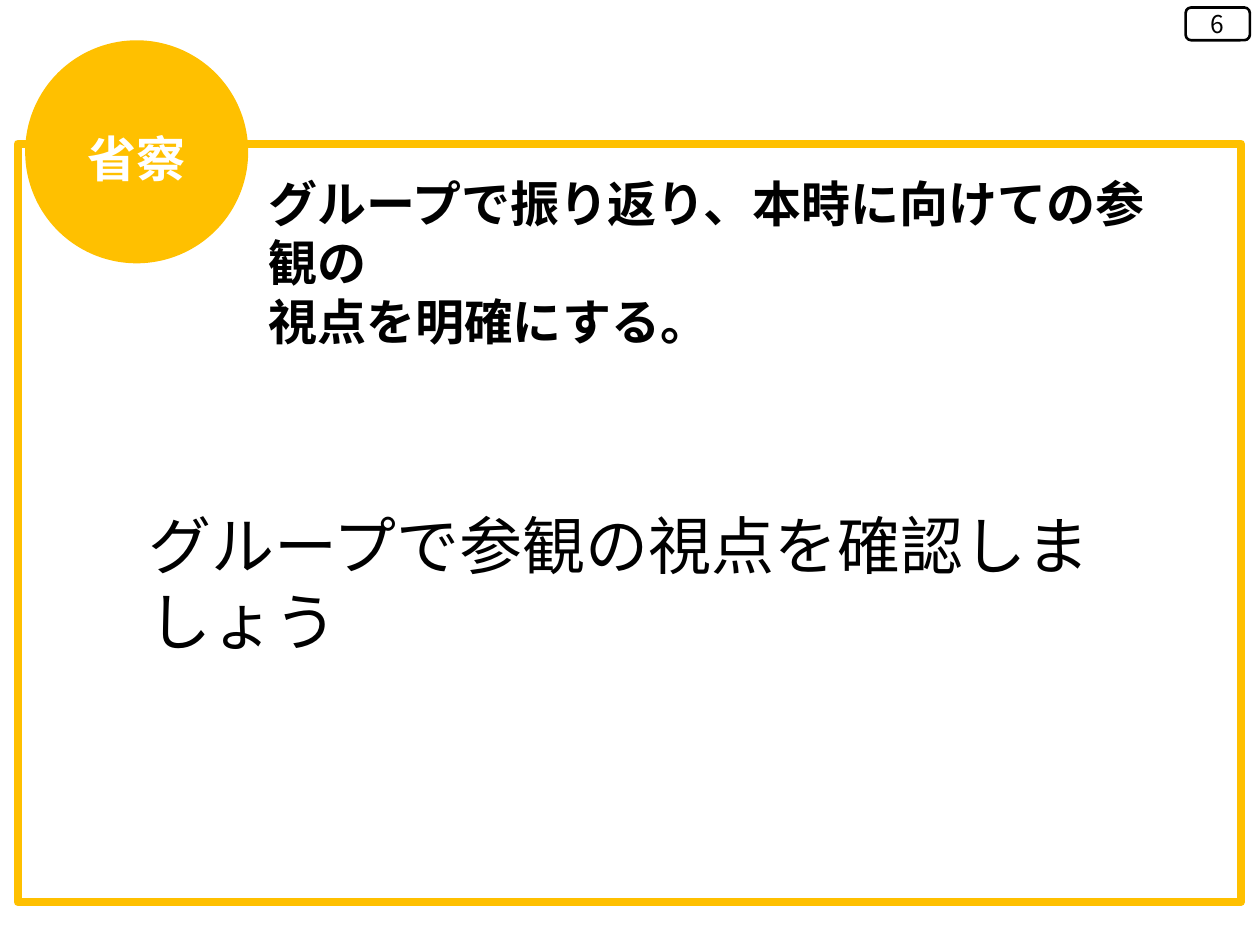
from dataclasses import dataclass

from lxml.etree import SubElement
from pptx import Presentation
from pptx.dml.color import RGBColor
from pptx.enum.shapes import MSO_SHAPE as Preset
from pptx.enum.text import MSO_ANCHOR as Anchor, MSO_AUTO_SIZE as Fit, PP_ALIGN as Align
from pptx.oxml.ns import qn
from pptx.util import Inches, Pt

FONT = "Noto Sans CJK JP"
GOLD, WHITE, BLACK = "FFC000", "FFFFFF", "000000"


@dataclass
class Box:
    left: float
    top: float
    width: float
    height: float

    def lengths(self):
        return [Inches(v) for v in (self.left, self.top, self.width, self.height)]


@dataclass
class Style:
    size: int
    color: str = BLACK
    bold: bool = False
    align: Align = Align.LEFT
    anchor: Anchor = Anchor.TOP


def rgb(color: str) -> RGBColor:
    return RGBColor.from_string(color)


def write(shape, text: str, style: Style) -> None:
    frame = shape.text_frame
    frame.text = text
    frame.word_wrap = True
    frame.auto_size = Fit.NONE
    frame.vertical_anchor = style.anchor
    for para in frame.paragraphs:
        para.alignment = style.align
        para.line_spacing = Pt(round(style.size * 1.2, 1))
        for run in para.runs:
            font = run.font
            font.name, font.size, font.bold = FONT, Pt(style.size), style.bold
            font.color.rgb = rgb(style.color)
            # Japanese glyphs take the East Asian typeface
            SubElement(run._r.get_or_add_rPr(), qn("a:ea"), typeface=FONT)


def draw(shapes, kind: Preset, box: Box, fill: str = "", line: str = "", width: float = 0):
    shape = shapes.add_shape(kind, *box.lengths())
    shape.shadow.inherit = False
    if fill:
        shape.fill.solid()
        shape.fill.fore_color.rgb = rgb(fill)
    else:
        shape.fill.background()
    if line:
        shape.line.color.rgb = rgb(line)
        shape.line.width = Pt(width)
    else:
        shape.line.fill.background()
    return shape


def label(shapes, box: Box, text: str, style: Style) -> None:
    write(shapes.add_textbox(*box.lengths()), text, style)


def main() -> None:
    deck = Presentation()
    deck.slide_width, deck.slide_height = Inches(10), Inches(7.5)
    slide = deck.slides.add_slide(deck.slide_layouts[5])
    shapes = slide.shapes

    # Heading
    title = shapes.title
    title.left, title.top, title.width, title.height = Box(2.03, 1.33, 7.38, 1.04).lengths()
    write(title, "グループで振り返り、本時に向けての参観の\n視点を明確にする。", Style(28, bold=True))

    # Frame
    draw(shapes, Preset.RECTANGLE, Box(0.14, 1.14, 9.71, 6.02), line=GOLD, width=4.5)

    # Phase badge
    badge = shapes.add_group_shape().shapes
    draw(badge, Preset.OVAL, Box(0.2, 0.32, 1.77, 1.77), fill=GOLD)
    label(badge, Box(0.11, 0.97, 1.95, 0.57), "省察",
          Style(28, WHITE, True, Align.CENTER))

    # Page number
    page = draw(shapes, Preset.ROUNDED_RECTANGLE, Box(9.41, 0.06, 0.51, 0.26),
                WHITE, BLACK, 1.5)
    write(page, "6", Style(14, align=Align.CENTER, anchor=Anchor.MIDDLE))

    # Task
    label(shapes, Box(1.08, 3.97, 7.83, 0.71), "グループで参観の視点を確認しましょう", Style(36))

    deck.save("out.pptx")


if __name__ == "__main__":
    main()
